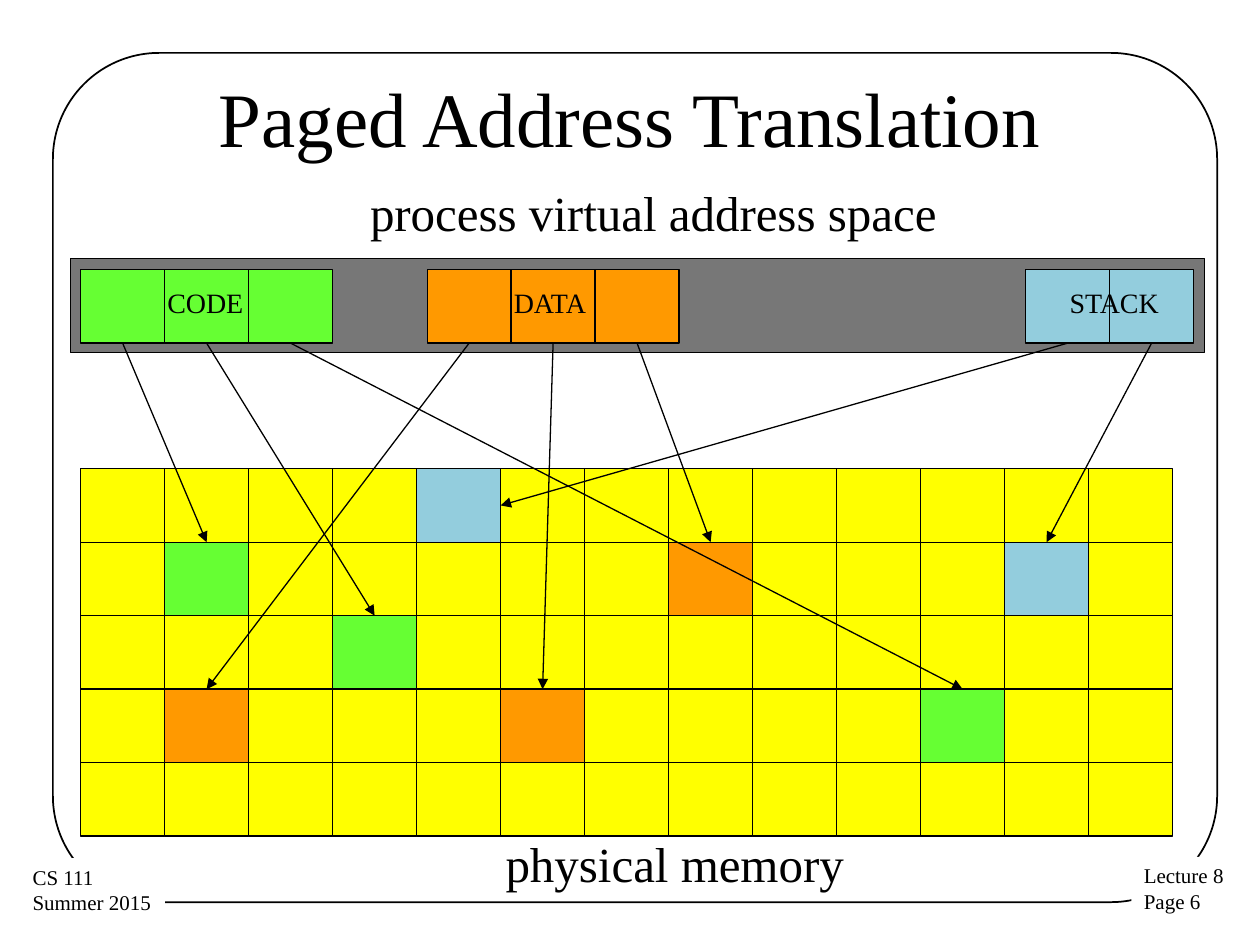
from dataclasses import dataclass

from lxml.etree import SubElement
from pptx import Presentation
from pptx.dml.color import RGBColor as Rgb
from pptx.enum.shapes import MSO_CONNECTOR as Conn, MSO_SHAPE as Kind
from pptx.enum.text import MSO_ANCHOR as Anchor, MSO_AUTO_SIZE as Fit, PP_ALIGN as Align
from pptx.oxml.ns import qn
from pptx.util import Inches, Pt


@dataclass(frozen=True)
class Theme:
    font: str = "Times New Roman"
    ink: str = "000000"
    paper: str = "FFFFFF"
    space: str = "777777"
    free: str = "FFFF00"
    code: str = "66FF33"
    data: str = "FF9900"
    stack: str = "93CDDD"
    title: int = 44
    head: int = 28
    label: int = 16
    foot: int = 12
    thin: float = 0.75
    frame: float = 1


def put(item, **vals):
    for name, val in vals.items():
        setattr(item, name, val)


def place(left, top, width, height):
    return [Inches(n) for n in (left, top, width, height)]


class Board:
    def __init__(self, slide, theme):
        self.slide, self.theme = slide, theme
        self.shapes = slide.shapes

    def letter(self, frame, text, size, align):
        """Set the text of a frame and style all its runs."""
        frame.text = text
        for para in frame.paragraphs:
            para.alignment = align
            for run in para.runs:
                put(run.font, name=self.theme.font, size=Pt(size))
                run.font.color.rgb = Rgb.from_string(self.theme.ink)

    def title(self, text, box):
        item = self.shapes.title
        put(item, **dict(zip(("left", "top", "width", "height"), place(*box))))
        put(item.text_frame, vertical_anchor=Anchor.MIDDLE, auto_size=Fit.NONE)
        self.letter(item.text_frame, text, self.theme.title, Align.CENTER)

    def text(self, text, box, size, align=Align.LEFT, wrap=True, fill=None):
        item = self.shapes.add_textbox(*place(*box))
        put(item.text_frame, word_wrap=wrap, auto_size=Fit.SHAPE_TO_FIT_TEXT)
        if fill:
            item.fill.solid()
            item.fill.fore_color.rgb = Rgb.from_string(fill)
        self.letter(item.text_frame, text, size, align)

    def shape(self, box, fill=None, kind=Kind.RECTANGLE, width=None):
        item = self.shapes.add_shape(kind, *place(*box))
        item.shadow.inherit = False
        if fill:
            item.fill.solid()
            item.fill.fore_color.rgb = Rgb.from_string(fill)
        else:
            item.fill.background()
        item.line.color.rgb = Rgb.from_string(self.theme.ink)
        item.line.width = Pt(width or self.theme.thin)
        return item

    def arrow(self, start, end, side):
        """Join the bottom of start to the given side of end."""
        item = self.shapes.add_connector(Conn.STRAIGHT, 0, 0, 0, 0)
        item.begin_connect(start, 2)
        item.end_connect(end, side)
        item.line.color.rgb = Rgb.from_string(self.theme.ink)
        item.line.width = Pt(self.theme.thin)
        props = item.element.spPr
        SubElement(props.find(qn("a:ln")), qn("a:tailEnd"), type="triangle")
        SubElement(props, qn("a:effectLst"))


WIDE, HIGH = 2 / 3, 7 / 12  # size of one page
LEFT, TOP = 0.64, 3.72  # corner of physical memory
ROWS, COLS = 5, 13
PAGES = 2.14  # top of the virtual pages
UP, RIGHT = 0, 3

# name, fill, left, label left, label width, (row, column, side) of each page
PARTS = [
    ("CODE", Theme.code, 0.64, 1.23, 1.58, [(1, 1, UP), (2, 3, UP), (3, 10, UP)]),
    ("DATA", Theme.data, 3.39, 3.98, 1.33, [(3, 1, UP), (3, 5, UP), (1, 7, UP)]),
    ("STACK", Theme.stack, 8.14, 8.39, 1.17, [(0, 4, RIGHT), (1, 11, UP)]),
]


def main():
    deck = Presentation()
    put(deck, slide_width=Inches(10), slide_height=Inches(7.5))
    theme = Theme()
    board = Board(deck.slides.add_slide(deck.slide_layouts[5]), theme)

    frame = board.shape((0.42, 0.42, 9.24, 6.74), kind=Kind.ROUNDED_RECTANGLE,
                        width=theme.frame)
    frame.adjustments[0] = 0.125
    for text, box in (("Lecture 8\nPage 6", (8.98, 6.8, 0.84, 0.51)),
                      ("CS 111\nSummer 2015", (0.16, 6.81, 1.15, 0.51))):
        board.text(text, box, theme.foot, wrap=False, fill=theme.paper)
    board.title("Paged Address Translation", (0.5, 0.3, 9, 1.25))

    board.shape((0.56, 2.05, 9, 0.75), theme.space)
    links, used = [], {}
    for name, fill, left, x, width, spots in PARTS:
        for i, (row, col, side) in enumerate(spots):
            page = board.shape((left + i * WIDE, PAGES, WIDE, HIGH), fill)
            links.append((page, (row, col), side))
            used[row, col] = fill
        board.text(name, (x, 2.22, width, 0.37), theme.label)

    cells = {}
    for row in range(ROWS):
        for col in range(COLS):
            box = (LEFT + col * WIDE, TOP + row * HIGH, WIDE, HIGH)
            cells[row, col] = board.shape(box, used.get((row, col), theme.free))

    for text, x, y in (("process virtual address space", 2.31, 1.4),
                       ("physical memory", 2.48, 6.57)):
        board.text(text, (x, y, 5.75, 0.57), theme.head, Align.CENTER)
    for page, spot, side in links:
        board.arrow(page, cells[spot], side)

    deck.save("out.pptx")


if __name__ == "__main__":
    main()
